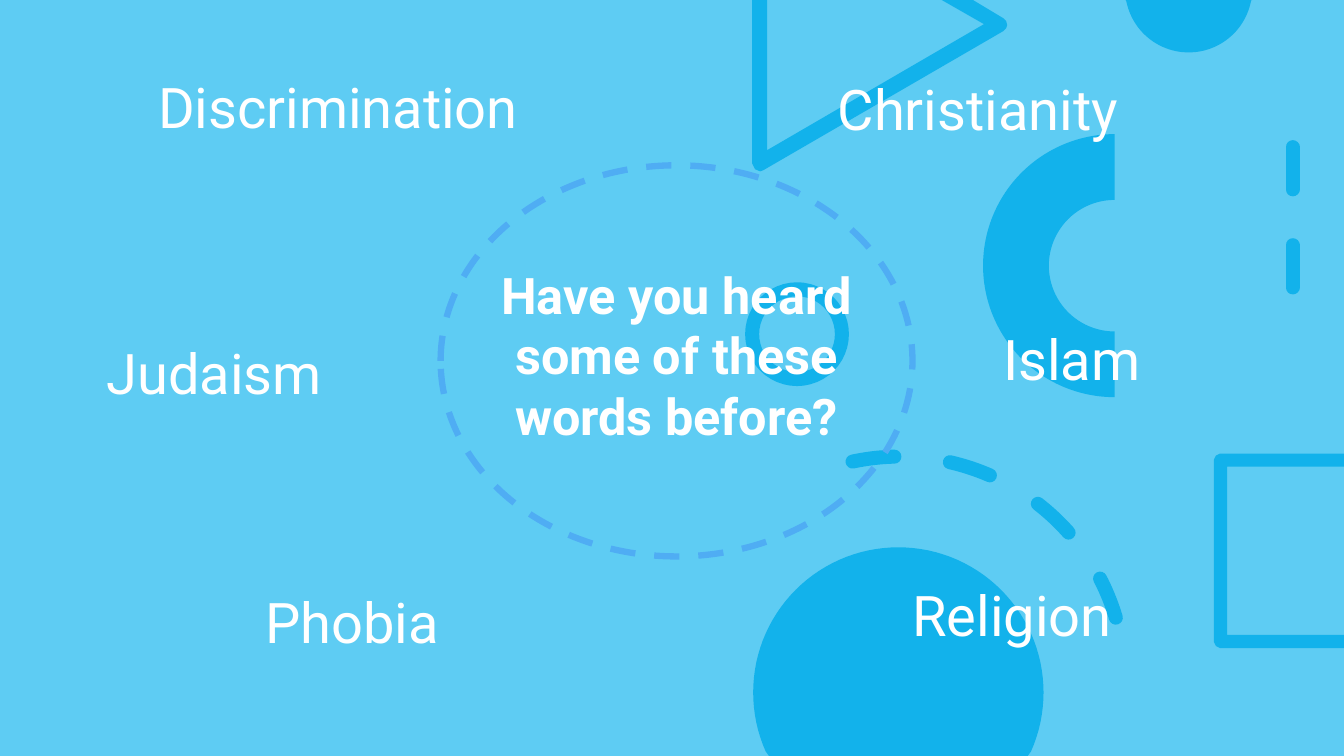
from math import cos, pi, sin

from pptx import Presentation
from pptx.dml.color import RGBColor
from pptx.enum.dml import MSO_LINE
from pptx.enum.shapes import MSO_CONNECTOR, MSO_SHAPE
from pptx.enum.text import MSO_ANCHOR, MSO_AUTO_SIZE, PP_ALIGN
from pptx.oxml.ns import qn
from pptx.util import Inches, Pt
from lxml.etree import SubElement

SKY, DEEP, DASHES, WHITE = "5ECCF3", "12B2EB", "4FADF3", "FFFFFF"
WIDTH, HEIGHT = 13.33, 7.5


def paint(shape, color, line_width=None):
    """Fill the shape, or only outline it when a line width in points is given."""
    shape.shadow.inherit = False
    if line_width:
        shape.fill.background()
        shape.line.color.rgb = RGBColor.from_string(color)
        shape.line.width = Pt(line_width)
    else:
        shape.fill.solid()
        shape.fill.fore_color.rgb = RGBColor.from_string(color)
        shape.line.fill.background()


def style_text(frame, size, bold=False):
    frame.word_wrap = True
    frame.auto_size = MSO_AUTO_SIZE.NONE
    frame.vertical_anchor = MSO_ANCHOR.TOP
    font = frame.paragraphs[0].runs[0].font
    font.name, font.size, font.bold = "Roboto", Pt(size), bold
    font.color.rgb = RGBColor.from_string(WHITE)


prs = Presentation()
prs.slide_width, prs.slide_height = Inches(WIDTH), Inches(HEIGHT)
slide = prs.slides.add_slide(prs.slide_layouts[5])
shapes = slide.shapes
slide.background.fill.solid()
slide.background.fill.fore_color.rgb = RGBColor.from_string(SKY)

# Outlines cut off by the slide edge
triangle = [(7.46, 0), (7.61, 0), (7.61, 1.49), (9.76, 0.24), (9.34, 0), (9.65, 0),
            (9.95, 0.18), (9.98, 0.21), (9.99, 0.25), (9.98, 0.28), (9.95, 0.31),
            (7.57, 1.69), (7.54, 1.7), (7.49, 1.68), (7.46, 1.62)]
square = [(12.1, 4.5), (WIDTH, 4.5), (WIDTH, 4.63), (12.17, 4.63), (12.17, 6.3),
          (WIDTH, 6.3), (WIDTH, 6.43), (12.1, 6.43), (12.06, 6.41), (12.04, 6.37),
          (12.04, 4.56), (12.06, 4.52)]
outlines = [triangle, square]
for center_x, center_y, radius in [(11.79, -0.11, 0.63), (8.91, 6.87, 1.44)]:
    angles = [2 * pi * step / 120 for step in range(120)]
    outlines.append([(center_x + radius * cos(angle),
                      min(max(center_y + radius * sin(angle), 0), HEIGHT))
                     for angle in angles])
for points in outlines:
    corners = [(Inches(x), Inches(y)) for x, y in points]
    builder = shapes.build_freeform(*corners[0])
    builder.add_line_segments(corners[1:], close=True)
    paint(builder.convert_to_shape(), DEEP)

ring = shapes.add_shape(MSO_SHAPE.OVAL, Inches(7.46), Inches(2.87), Inches(0.89), Inches(0.89))
paint(ring, DEEP, 10)

half_ring = shapes.add_shape(MSO_SHAPE.BLOCK_ARC, Inches(9.75), Inches(1.33),
                             Inches(2.61), Inches(2.61))
half_ring.rotation = 270
paint(half_ring, DEEP)

# Dashed strokes with round ends
arc = shapes.add_shape(MSO_SHAPE.ARC, Inches(6.69), Inches(4.53), Inches(4.47), Inches(4.47))
arc.rotation = 347.9
paint(arc, DEEP, 10)

stroke = shapes.add_connector(MSO_CONNECTOR.STRAIGHT, Inches(12.82), Inches(1.46),
                              Inches(12.82), Inches(3.2))
stroke.line.color.rgb = RGBColor.from_string(DEEP)
stroke.line.width = Pt(10)
SubElement(stroke.element.spPr, qn("a:effectLst"))

for dashed in (arc, stroke):
    dashed.line.dash_style = MSO_LINE.DASH
    dashed.element.spPr.find(qn("a:ln")).set("cap", "rnd")

# Central question
bubble = shapes.add_shape(MSO_SHAPE.OVAL, Inches(4.37), Inches(1.64), Inches(4.68), Inches(3.88))
paint(bubble, DASHES, 4.5)
bubble.line.dash_style = MSO_LINE.DASH

question = shapes.title
question.left, question.top = Inches(4.77), Inches(2.57)
question.width, question.height = Inches(3.88), Inches(2.52)
question.text_frame.text = "Have you heard some of these words before?"
question.text_frame.paragraphs[0].alignment = PP_ALIGN.CENTER
style_text(question.text_frame, 36, bold=True)
bubble.element.addnext(question.element)

# Words around the question
words = [
    ("Discrimination", 1.47, 0.67, 4.19),
    ("Phobia", 2.53, 5.78, 2.62),
    ("Religion", 8.95, 5.71, 2.62),
    ("Judaism", 0.96, 3.31, 2.62),
    ("Christianity", 8.21, 0.69, 3.47),
    ("Islam", 9.85, 3.17, 2.62),
]
for word, left, top, width in words:
    box = shapes.add_textbox(Inches(left), Inches(top), Inches(width), Inches(0.77))
    box.text_frame.text = word
    style_text(box.text_frame, 40)

prs.save("out.pptx")
